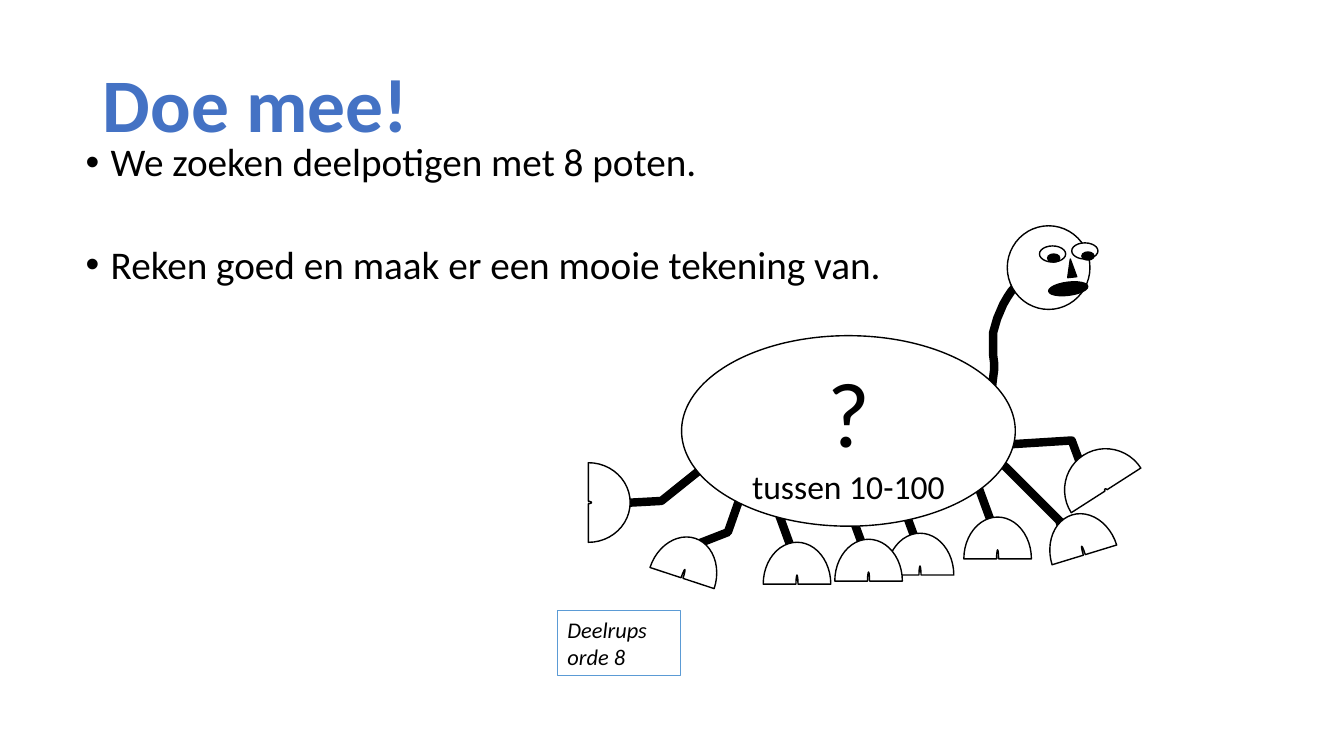
from pptx import Presentation
from pptx.dml.color import RGBColor
from pptx.enum.shapes import MSO_SHAPE
from pptx.enum.text import MSO_ANCHOR, PP_ALIGN
from pptx.oxml.ns import qn
from pptx.util import Inches, Pt
from lxml import etree

OVAL, ARC = MSO_SHAPE.OVAL, MSO_SHAPE.BLOCK_ARC
TRIANGLE, RECT = MSO_SHAPE.ISOSCELES_TRIANGLE, MSO_SHAPE.RECTANGLE
MIDDLE, TOP = MSO_ANCHOR.MIDDLE, MSO_ANCHOR.TOP
LEFT, CENTER = PP_ALIGN.LEFT, PP_ALIGN.CENTER
BLACK, WHITE, BLUE = "000000", "FFFFFF", "4472C4"

prs = Presentation()
prs.slide_width, prs.slide_height = Inches(13.33), Inches(7.5)
CELL = prs.slide_height // 750
slide = prs.slides.add_slide(prs.slide_layouts[5])


def style(sp, fill, line, weight):
    sp.shadow.inherit = False
    if fill:
        sp.fill.solid()
        sp.fill.fore_color.rgb = RGBColor.from_string(fill)
    else:
        sp.fill.background()
    sp.line.color.rgb = RGBColor.from_string(line)
    sp.line.width = Pt(weight)


def write(p, text, size, color=BLACK, bold=False, italic=False):
    r = p.add_run()
    r.text = text
    r.font.name = "Calibri"
    r.font.size = Pt(size)
    r.font.bold, r.font.italic = bold, italic
    r.font.color.rgb = RGBColor.from_string(color)


title = slide.shapes.title
title.left, title.top, title.width, title.height = [v * CELL for v in (92, 35, 1150, 145)]
title.text_frame.vertical_anchor = MIDDLE
p = title.text_frame.paragraphs[0]
p.alignment, p.line_spacing = LEFT, 0.9
write(p, "Doe mee!", 54, BLUE, bold=True)

body = slide.shapes.add_textbox(*[v * CELL for v in (75, 137, 1150, 476)])
tf = body.text_frame
tf.word_wrap = True
tasks = ["We zoeken deelpotigen met 8 poten.",
         "Reken goed en maak er een mooie tekening van."]
for i, task in enumerate(tasks):
    p = tf.add_paragraph() if i else tf.paragraphs[0]
    p.line_spacing, p.space_before = 0.9, Pt(43 * i)
    pPr = p._p.get_or_add_pPr()
    pPr.set("marL", str(25 * CELL))
    pPr.set("indent", str(-25 * CELL))
    etree.SubElement(pPr, qn("a:buFont")).set("typeface", "Arial")
    etree.SubElement(pPr, qn("a:buChar")).set("char", "•")
    write(p, task, 28)

label = slide.shapes.add_shape(RECT, *[v * CELL for v in (553, 606, 122, 64)])
style(label, None, "5B9BD5", 0.75)
tf = label.text_frame
tf.word_wrap, tf.vertical_anchor = True, TOP
for i, line in enumerate(["Deelrups", "orde 8"]):
    p = tf.add_paragraph() if i else tf.paragraphs[0]
    p.alignment = LEFT
    write(p, line, 16, italic=True)

neck = [(958, 448)]
for bend in [[(969, 428), (979, 404), (984, 383)],
             [(989, 362), (981, 341), (987, 323)],
             [(993, 305), (1002, 281), (1020, 277)]]:
    (x0, y0), (x1, y1), (x2, y2), (x3, y3) = neck[-1], *bend
    for step in range(1, 9):
        t = step / 8
        a, b, c, d = (1 - t) ** 3, 3 * t * (1 - t) ** 2, 3 * t * t * (1 - t), t ** 3
        neck.append((a * x0 + b * x1 + c * x2 + d * x3,
                     a * y0 + b * y1 + c * y2 + d * y3))

limbs = [neck,
         [(736, 488), (722, 528), (686, 542)],
         [(983, 442), (1063, 437), (1073, 464)],
         [(717, 448), (656, 497), (619, 499)],
         [(990, 456), (1054, 520), (1048, 522)]]
for x, y in [(967, 474), (891, 489), (839, 496), (768, 498)]:
    limbs.append([(x, y), (x + 15, y + 41), (x + 14, y + 42)])
for limb in limbs:
    fb = slide.shapes.build_freeform(*limb[0], scale=CELL)
    fb.add_line_segments(limb[1:], close=False)
    style(fb.convert_to_shape(), None, BLACK, 6)

feet = [(643, 532, 67, 83, 18.2), (1056, 445, 82, 83, 327.3),
        (544, 457, 79, 83, 90), (1042, 509, 67, 83, 343)]
feet += [(x, y, 67, 83, 0) for x, y in [(956, 513), (879, 529), (828, 535), (757, 538)]]
for *box, turn in feet:
    foot = slide.shapes.add_shape(ARC, *[v * CELL for v in box])
    foot.adjustments[2] = 0.485
    foot.rotation = turn
    style(foot, WHITE, BLACK, 1)

head = slide.shapes.add_group_shape()
for kind, box, turn, fill in [
        (OVAL, (999, 224, 82, 83), 0, WHITE),
        (OVAL, (1031, 244, 26, 16), 0, WHITE),
        (OVAL, (1063, 241, 26, 16), 0, WHITE),
        (OVAL, (1039, 252, 12, 8), 0, BLACK),
        (OVAL, (1073, 250, 12, 8), 0, BLACK),
        (OVAL, (1040, 280, 39, 13), 352.8, BLACK),
        (TRIANGLE, (1058, 257, 9, 18), 354, BLACK)]:
    part = head.shapes.add_shape(kind, *[v * CELL for v in box])
    part.rotation = turn
    style(part, fill, BLACK, 1)

belly = slide.shapes.add_shape(OVAL, *[v * CELL for v in (676, 333, 331, 189)])
style(belly, WHITE, BLACK, 1)
tf = belly.text_frame
tf.word_wrap, tf.vertical_anchor = True, MIDDLE
for i, (line, size) in enumerate([("?", 66), ("tussen 10-100", 24)]):
    p = tf.add_paragraph() if i else tf.paragraphs[0]
    p.alignment = CENTER
    write(p, line, size)

prs.save("out.pptx")
